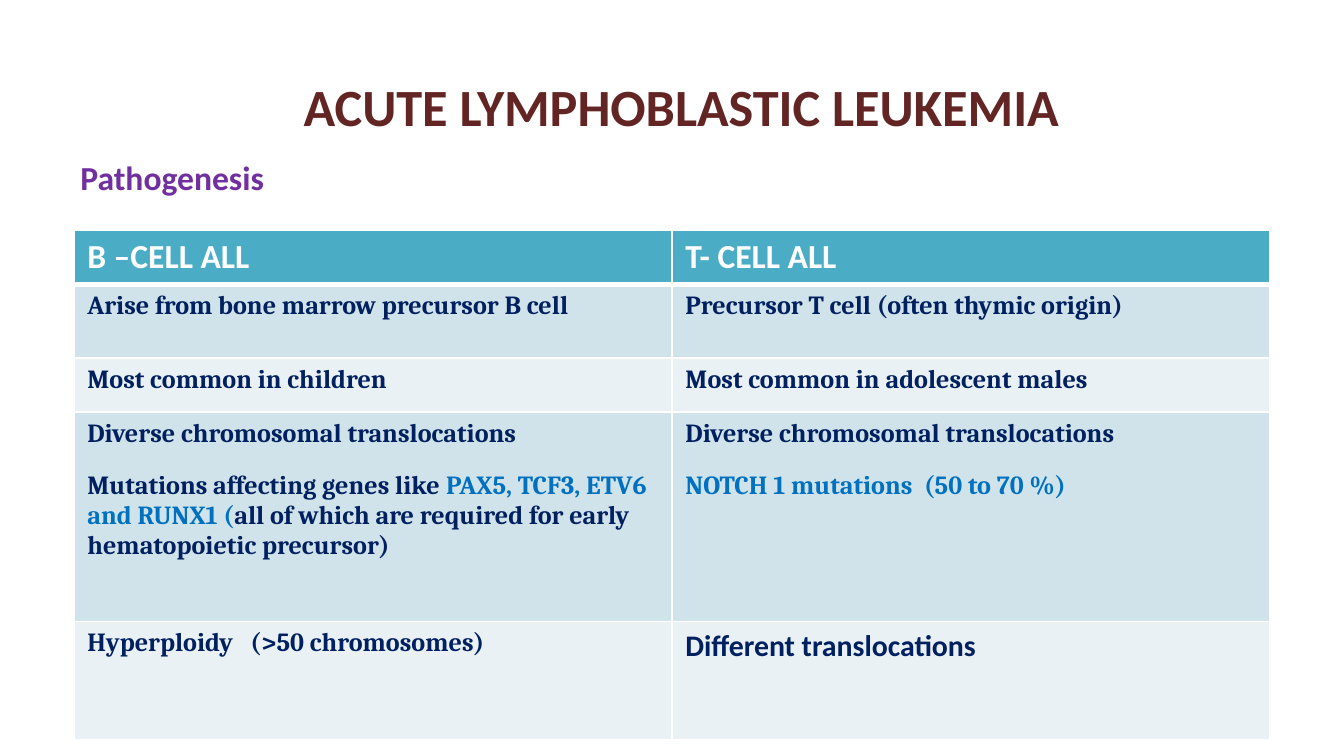
"""Build the slide that compares B-cell and T-cell acute lymphoblastic leukemia."""
from dataclasses import dataclass

from lxml.etree import SubElement
from pptx import Presentation
from pptx.dml.color import RGBColor as Rgb
from pptx.enum.text import MSO_ANCHOR as Anchor, PP_ALIGN as Align
from pptx.oxml.ns import qn
from pptx.util import Inches, Pt


@dataclass(frozen=True)
class Theme:
    heading_font: str = "Calibri"
    body_font: str = "Cambria"
    title: str = "632523"
    title_space: str = "000000"
    subtitle: str = "7030A0"
    header_text: str = "FFFFFF"
    header_fill: str = "4BACC6"
    border: str = "FFFFFF"
    body: str = "002060"
    accent: str = "0070C0"
    bands: tuple = ("D0E3EA", "E9F1F5")
    title_size: int = 28
    title_space_size: int = 44
    heading_size: int = 18
    large_body_size: int = 16
    body_size: int = 14
    paragraph_gap: int = 6
    border_width: int = 1
    header_rule_width: int = 3


THEME = Theme()
SLIDE_WIDTH = Inches(10)
SLIDE_HEIGHT = SLIDE_WIDTH * 9 // 16
TITLE = "ACUTE LYMPHOBLASTIC LEUKEMIA"
SUBTITLE = "Pathogenesis"
HEADERS = ["B –CELL ALL", "T- CELL ALL"]
BODY, ACCENT = THEME.body, THEME.accent
TRANSLOCATIONS = [("Diverse chromosomal translocations", BODY)]
ROWS = [
    [
        [[("Arise from bone marrow precursor B cell", BODY)]],
        [[("Precursor T cell (often thymic origin)", BODY)]],
    ],
    [
        [[("Most common in children", BODY)]],
        [[("Most common in adolescent males", BODY)]],
    ],
    [
        [
            TRANSLOCATIONS,
            [
                ("Mutations affecting genes like ", BODY),
                ("PAX5, TCF3, ETV6 and RUNX1 (", ACCENT),
                ("all of which are required for early hematopoietic precursor)", BODY),
            ],
        ],
        [TRANSLOCATIONS, [("NOTCH 1 mutations  (50 to 70 %)", ACCENT)]],
    ],
    [
        [[("Hyperploidy   (>50 chromosomes)", BODY)]],
        [[("Different translocations", BODY)]],
    ],
]
ROW_HEIGHTS = [0.4, 0.55, 0.4, 1.56, 0.88]
LARGE_CELL = (4, 1)


def style_font(font, name, size, color=None, bold=True):
    font.name, font.size, font.bold = name, Pt(size), bold
    if color:
        font.color.rgb = Rgb.from_string(color)


def add_title(slide):
    title = slide.shapes.title
    title.left, title.top = Inches(0.5), Inches(0.23)
    title.width, title.height = Inches(9), Inches(0.94)
    title.text_frame.vertical_anchor = Anchor.MIDDLE
    paragraph = title.text_frame.paragraphs[0]
    paragraph.alignment = Align.CENTER
    for text, size, color, bold in (
        (" ", THEME.title_space_size, THEME.title_space, False),
        (TITLE, THEME.title_size, THEME.title, True),
    ):
        run = paragraph.add_run()
        run.text = text
        style_font(run.font, THEME.heading_font, size, color, bold)


def add_subtitle(slide):
    box = slide.shapes.add_textbox(Inches(0.5), Inches(1.12), Inches(3.16), Inches(0.4))
    box.text_frame.word_wrap = True
    paragraph = box.text_frame.paragraphs[0]
    paragraph.text = SUBTITLE
    style_font(paragraph.font, THEME.heading_font, THEME.heading_size, THEME.subtitle)


def set_borders(cell, top, bottom):
    properties = cell._tc.get_or_add_tcPr()
    side = THEME.border_width
    widths = {"a:lnL": side, "a:lnR": side, "a:lnT": top, "a:lnB": bottom}
    for index, (tag, width) in enumerate(widths.items()):
        line = SubElement(properties, qn(tag), w=str(Pt(width)))
        fill = SubElement(line, qn("a:solidFill"))
        SubElement(fill, qn("a:srgbClr"), val=THEME.border)
        properties.insert(index, line)


def fill_cell(cell, paragraphs, fill, font_name, size, gap=None):
    cell.fill.solid()
    cell.fill.fore_color.rgb = Rgb.from_string(fill)
    frame = cell.text_frame
    for index, runs in enumerate(paragraphs):
        paragraph = frame.add_paragraph() if index else frame.paragraphs[0]
        style_font(paragraph.font, font_name, size)
        if gap is not None:
            paragraph.space_before = paragraph.space_after = Pt(gap)
        for text, color in runs:
            run = paragraph.add_run()
            run.text = text
            run.font.color.rgb = Rgb.from_string(color)


def add_comparison(slide):
    table = slide.shapes.add_table(
        len(ROW_HEIGHTS), len(HEADERS),
        Inches(0.55), Inches(1.71), Inches(8.9), Inches(sum(ROW_HEIGHTS)),
    ).table
    for row, height in zip(table.rows, ROW_HEIGHTS):
        row.height = Inches(height)
    for column, text in enumerate(HEADERS):
        cell = table.cell(0, column)
        fill_cell(cell, [[(text, THEME.header_text)]],
                  THEME.header_fill, THEME.heading_font, THEME.heading_size)
        set_borders(cell, THEME.border_width, THEME.header_rule_width)
    for row, cells in enumerate(ROWS, start=1):
        fill = THEME.bands[(row - 1) % len(THEME.bands)]
        top = THEME.header_rule_width if row == 1 else THEME.border_width
        for column, paragraphs in enumerate(cells):
            font_name, size = THEME.body_font, THEME.body_size
            if (row, column) == LARGE_CELL:
                font_name, size = THEME.heading_font, THEME.large_body_size
            cell = table.cell(row, column)
            fill_cell(cell, paragraphs, fill, font_name, size, THEME.paragraph_gap)
            set_borders(cell, top, THEME.border_width)


def main():
    presentation = Presentation()
    presentation.slide_width, presentation.slide_height = SLIDE_WIDTH, SLIDE_HEIGHT
    slide = presentation.slides.add_slide(presentation.slide_layouts[5])
    add_title(slide)
    add_comparison(slide)
    add_subtitle(slide)
    presentation.save("out.pptx")


if __name__ == "__main__":
    main()
